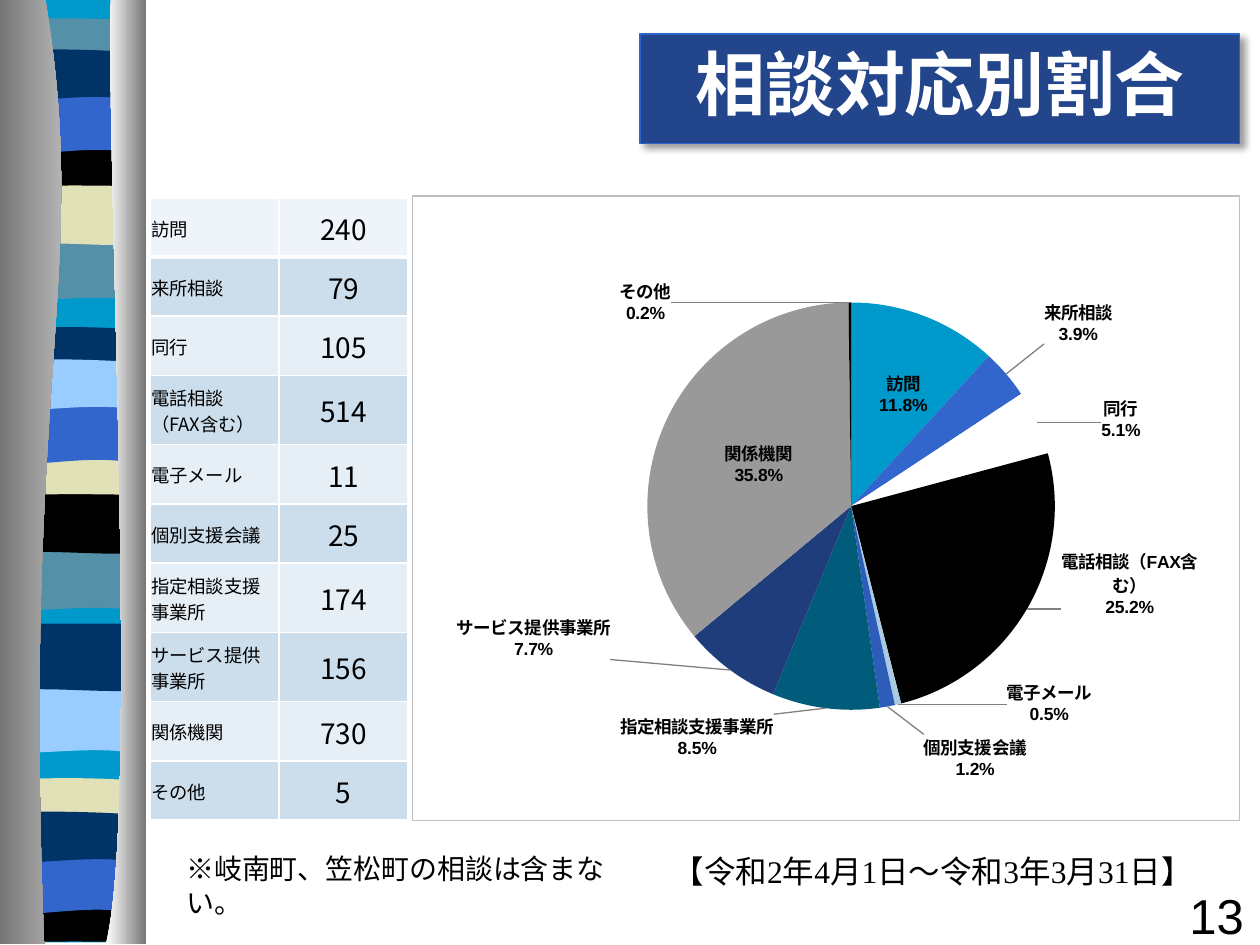
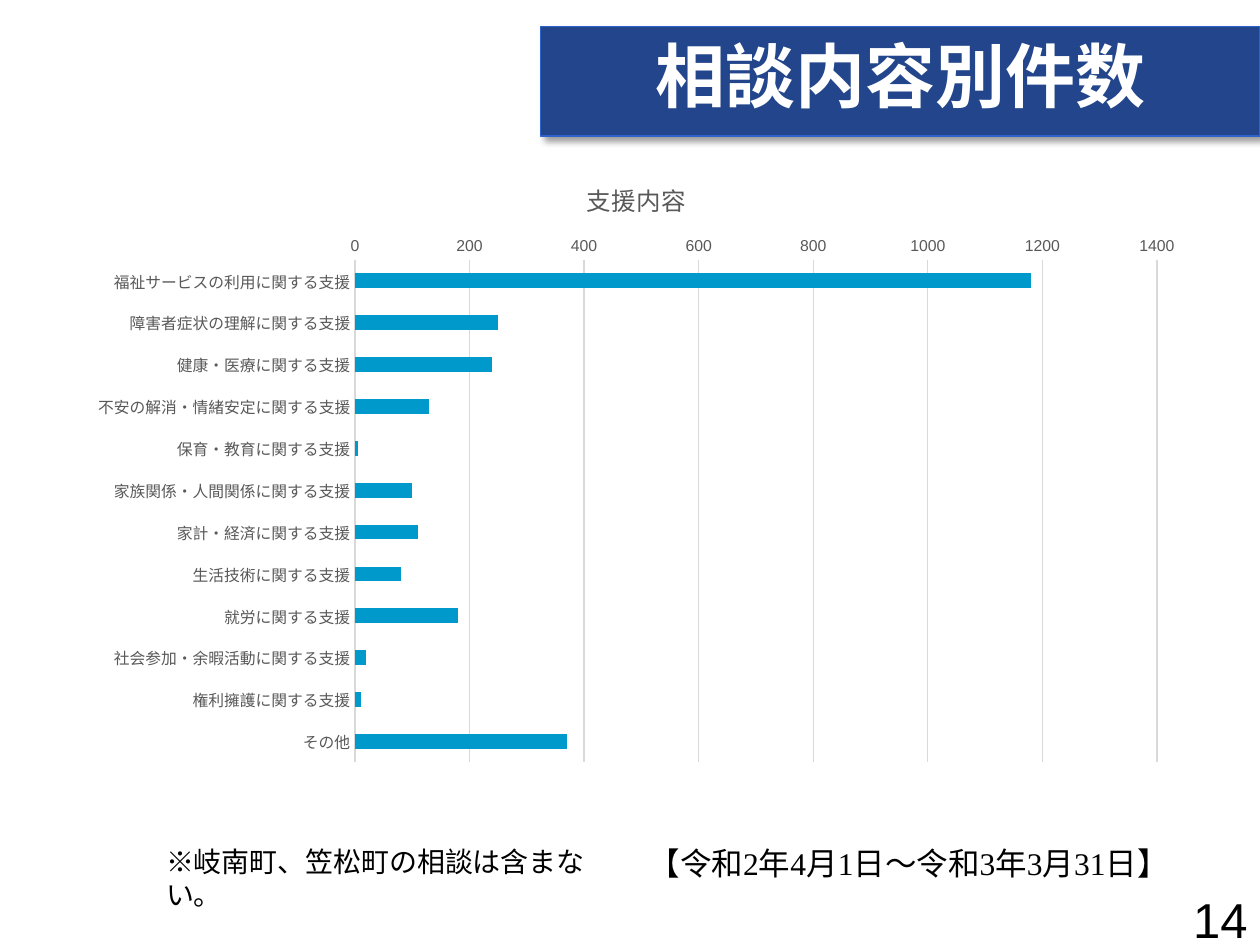
from copy import deepcopy
from itertools import accumulate
from math import cos, pi, sin

from pptx import Presentation
from pptx.chart.data import CategoryChartData
from pptx.dml.color import RGBColor
from pptx.enum.chart import XL_CHART_TYPE as ChartType, XL_LABEL_POSITION as LabelPos
from pptx.enum.chart import XL_TICK_MARK as TickMark
from pptx.enum.text import MSO_ANCHOR as Anchor, MSO_AUTO_SIZE as AutoSize, PP_ALIGN as Align
from pptx.oxml import parse_xml
from pptx.oxml.ns import nsdecls, qn
from pptx.util import Inches, Pt

BLACK = RGBColor(0, 0, 0)
WHITE = RGBColor(255, 255, 255)
TITLE_FILL = RGBColor(0x22, 0x45, 0x8B)
TITLE_LINE = RGBColor(0x2E, 0x63, 0xCB)
CYAN = RGBColor(0x00, 0x99, 0xCC)
TEAL = RGBColor(0x54, 0x90, 0xA8)
NAVY = RGBColor(0x00, 0x33, 0x66)
BLUE = RGBColor(0x33, 0x66, 0xCC)
SAND = RGBColor(0xE1, 0xE1, 0xB7)
SKY = RGBColor(0x99, 0xCC, 0xFF)
DARK_GRAY = RGBColor(0x76, 0x76, 0x76)
LIGHT_GRAY = RGBColor(0xD0, 0xD0, 0xD0)
CHART_TEXT = RGBColor(0x59, 0x59, 0x59)
GRID = RGBColor(0xD9, 0xD9, 0xD9)
FIRST_ROW = RGBColor(0xEE, 0xF4, 0xF9)
ODD_ROW = RGBColor(0xCC, 0xDE, 0xEC)
EVEN_ROW = RGBColor(0xE7, 0xEF, 0xF6)

GOTHIC, SANS, SERIF = "Noto Sans CJK JP", "Arial", "Times New Roman"
SCOPE_NOTE = "※岐南町、笠松町の相談は含まない。"
PERIOD = "【令和2年4月1日～令和3年3月31日】"

FLAT = (0, 0, 0, 0)
BASE = (FLAT, (7.48, 7.48, 7.48, 7.48))
WIDE = (FLAT, (0.55, 0.47, 0.55, 0.53))
DEEP = (FLAT, (0.53, 0.55, 0.5, 0.53))
CAP = ((0.02, 0, 0, 0.03), (0.33, 0.33, 0.33, 0.33))
DARK = (FLAT, (0.38, 0.37, 0.37, 0.38))
DIP = (FLAT, (0.47, 0.38, 0.47, 0.47))
OCEAN = ((0, 0, 0, 0.03), (0.41, 0.34, 0.41, 0.41))
STRIPES = [
    (0, BASE, CYAN),
    (1.85, WIDE, TEAL), (1.41, DEEP, SAND), (0.14, CAP, TEAL), (1.1, DARK, BLACK),
    (0.76, DIP, BLUE), (0.39, OCEAN, NAVY),
    (4.31, WIDE, TEAL), (3.86, DEEP, BLACK), (2.59, CAP, NAVY), (3.55, DARK, SAND),
    (3.22, DIP, BLUE), (2.85, OCEAN, SKY),
    (5.44, WIDE, SKY), (4.95, DEEP, NAVY), (6.17, CAP, SAND), (7.1, DARK, BLACK),
    (6.79, DIP, BLUE), (6.44, OCEAN, NAVY),
]

RESPONSES = [
    ("訪問", 240), ("来所相談", 79), ("同行", 105), ("電話相談\n（FAX含む）", 514),
    ("電子メール", 11), ("個別支援会議", 25), ("指定相談支援事業所", 174),
    ("サービス提供事業所", 156), ("関係機関", 730), ("その他", 5),
]
SHARES = [11.8, 3.9, 5.1, 25.2, 0.5, 1.2, 8.5, 7.7, 35.8, 0.2]
SLICE_COLORS = [CYAN, BLUE, WHITE, BLACK, RGBColor(0xAA, 0xCA, 0xE2),
                RGBColor(0x2D, 0x5C, 0xB9), RGBColor(0x00, 0x5C, 0x7A),
                RGBColor(0x1F, 0x3D, 0x7A), RGBColor(0x99, 0x99, 0x99), BLACK]
LABEL_CENTERS = {0: (3.9, 1.57), 1: (5.29, 1.0), 2: (5.63, 1.77), 3: (5.7, 3.08),
                 4: (5.06, 4.03), 5: (4.47, 4.46), 6: (2.26, 4.3), 7: (0.96, 3.51),
                 9: (1.85, 0.84)}

SUPPORTS = {
    "福祉サービスの利用に関する支援": 1180, "障害者症状の理解に関する支援": 250,
    "健康・医療に関する支援": 240, "不安の解消・情緒安定に関する支援": 130,
    "保育・教育に関する支援": 5, "家族関係・人間関係に関する支援": 100,
    "家計・経済に関する支援": 110, "生活技術に関する支援": 80, "就労に関する支援": 180,
    "社会参加・余暇活動に関する支援": 20, "権利擁護に関する支援": 10, "その他": 370,
}


def style_font(font, size, color, name=SANS, bold=False):
    """Set size, colour, typeface and weight of a font."""
    for key, value in {"size": Pt(size), "name": name, "bold": bold}.items():
        setattr(font, key, value)
    font.color.rgb = color


def write(frame, text, size, color, name, align=Align.LEFT, bold=False):
    """Fill a text frame with one paragraph per line of text."""
    frame.text = text
    frame.word_wrap = True
    for para in frame.paragraphs:
        para.alignment = align
        for span in para.runs:
            style_font(span.font, size, color, name, bold)
            if name == GOTHIC:
                span.font._element.find(qn("a:latin")).addnext(
                    parse_xml(f'<a:ea {nsdecls("a")} typeface="{GOTHIC}"/>'))


def add_title(page, text, box):
    """Format the title placeholder as a shadowed banner."""
    title = page.shapes.title
    for key, value in zip(("left", "top", "width", "height"), box):
        setattr(title, key, Inches(value))
    title.fill.solid()
    title.fill.fore_color.rgb = TITLE_FILL
    title.line.color.rgb = TITLE_LINE
    title.line.width = Pt(0.75)
    title.shadow.inherit = False
    title._element.spPr.find(qn("a:effectLst")).append(parse_xml(
        f'<a:outerShdw {nsdecls("a")} blurRad="{Pt(4)}" dist="{Pt(3)}" dir="2700000" '
        'algn="tl" rotWithShape="0"><a:srgbClr val="000000"><a:alpha val="38000"/>'
        '</a:srgbClr></a:outerShdw>'))
    frame = title.text_frame
    write(frame, text, 40, WHITE, GOTHIC, Align.CENTER, True)
    for key, value in {"auto_size": AutoSize.NONE, "vertical_anchor": Anchor.MIDDLE,
                       "margin_top": 0, "margin_bottom": Inches(0.1)}.items():
        setattr(frame, key, value)


def add_text(page, text, box, size, name, align=Align.LEFT):
    """Add a plain black text box and return its frame."""
    frame = page.shapes.add_textbox(*map(Inches, box)).text_frame
    write(frame, text, size, BLACK, name, align)
    return frame


def add_footer(page, left, period_left, top, number, number_box):
    """Add the period, the scope note and the page number."""
    add_text(page, PERIOD, (period_left, top, 4.61, 0.4), 18, SERIF)
    note = add_text(page, SCOPE_NOTE, (left, top, 3.94, 0.67), 16, SERIF)
    note.margin_right = Inches(0.3)
    frame = add_text(page, number, number_box, 28, SANS, Align.RIGHT)
    frame.margin_top = Inches(0.06)


def add_outline(page, points, curve_starts):
    """Draw a closed outline whose sides from the given indexes are cubic curves."""
    units = [(round(x * 1000), round(y * 1000)) for x, y in points]
    builder = page.shapes.build_freeform(*units[0], scale=Inches(1) / 1000)
    builder.add_line_segments(units[1:], close=True)
    shape = builder.convert_to_shape()
    sides = list(shape._element.iter(qn("a:lnTo")))
    for start in curve_starts:
        curve = parse_xml(f'<a:cubicBezTo {nsdecls("a")}/>')
        sides[start].addprevious(curve)
        for side in sides[start:start + 3]:
            curve.append(side[0])
            side.getparent().remove(side)
    shape.line.fill.background()
    shape.shadow.inherit = False
    return shape


def add_side_band(page, left, right, bottom):
    """Draw the wavy stripes between two shaded columns."""
    third = (right - left) / 3
    across = [left, left + third, right - third, right]
    for top, (upper, lower), color in STRIPES:
        points = list(zip(across, upper)) + list(zip(reversed(across), lower))
        stripe = add_outline(page, [(x, top + y) for x, y in points], (0, 4))
        stripe.fill.solid()
        stripe.fill.fore_color.rgb = color
    columns = [
        (0, [(0.36, 0), (0.72, 2.16), (0.17, 2.96), (0.35, bottom)], DARK_GRAY, LIGHT_GRAY),
        (1.16, [(0.88, 0), (0.84, 1.25), (1.11, 6.46), (0.84, bottom)], WHITE, DARK_GRAY),
    ]
    for side, edge, start, end in columns:
        column = add_outline(page, edge + [(side, bottom), (side, 0)], (0,))
        column.fill.gradient()
        column.fill.gradient_angle = 0
        for stop, color in zip(column.fill.gradient_stops, (start, end)):
            stop.color.rgb = color


def set_borders(cell, bottom_width):
    """Give a cell white borders."""
    props = cell._tc.get_or_add_tcPr()
    widths = {"lnL": 1, "lnR": 1, "lnT": 1, "lnB": bottom_width}
    for index, (side, width) in enumerate(widths.items()):
        props.insert(index, parse_xml(
            f'<a:{side} {nsdecls("a")} w="{Pt(width)}"><a:solidFill>'
            f'<a:srgbClr val="{WHITE}"/></a:solidFill></a:{side}>'))


def add_response_table(page, box):
    """Add the table of responses and counts."""
    table = page.shapes.add_table(len(RESPONSES), 2, *map(Inches, box)).table
    for r, (label, count) in enumerate(RESPONSES):
        table.rows[r].height = Inches(0.55 if r in (3, 6, 7) else 0.47)
        for c, (text, size, align) in enumerate(
                [(label, 10.5, Align.LEFT), (str(count), 16, Align.CENTER)]):
            cell = table.cell(r, c)
            write(cell.text_frame, text, size, BLACK, GOTHIC, align)
            margins = dict.fromkeys(("margin_left", "margin_top", "margin_right"), Inches(0.01))
            for key, value in {**margins, "margin_bottom": 0,
                               "vertical_anchor": Anchor.MIDDLE}.items():
                setattr(cell, key, value)
            cell.fill.solid()
            cell.fill.fore_color.rgb = FIRST_ROW if r == 0 else (EVEN_ROW, ODD_ROW)[r % 2]
            set_borders(cell, 3 if r == 0 else 1)


def add_chart(page, kind, categories, values, box):
    """Add a chart with one series and no legend."""
    data = CategoryChartData()
    data.categories = categories
    data.add_series("Series 1", values)
    chart = page.shapes.add_chart(kind, *map(Inches, box), data).chart
    style_font(chart.font, 10, BLACK)
    chart.has_legend = False
    return chart


def layout_xml(x, y, extra="", modes=""):
    """Return a manual chart layout element."""
    return (f'<c:layout {nsdecls("c")}><c:manualLayout>{modes}<c:x val="{x:.4f}"/>'
            f'<c:y val="{y:.4f}"/>{extra}</c:manualLayout></c:layout>')


def line_xml(color):
    """Return a thin chart outline in one colour."""
    return (f'<a:ln w="{Pt(0.75)}"><a:solidFill><a:srgbClr val="{color}"/>'
            '</a:solidFill></a:ln>')


def add_share_pie(page, box):
    """Add the framed pie chart with placed labels."""
    names = [label.replace("\n", "") for label, _ in RESPONSES]
    chart = add_chart(page, ChartType.PIE, names, SHARES, box)
    chart.has_title = False
    plot_x, plot_y, plot_w, plot_h = 0.284, 0.088, 0.493, 0.817
    area = chart._chartSpace.chart.plotArea
    for old in area.findall(qn("c:layout")):
        area.remove(old)
    area.insert(0, parse_xml(layout_xml(
        plot_x, plot_y, f'<c:w val="{plot_w}"/><c:h val="{plot_h}"/>',
        '<c:layoutTarget val="inner"/><c:xMode val="edge"/><c:yMode val="edge"/>')))
    chart._chartSpace.chart.addnext(parse_xml(
        f'<c:spPr {nsdecls("c", "a")}><a:solidFill><a:srgbClr val="{WHITE}"/></a:solidFill>'
        f'{line_xml("BFBFBF")}</c:spPr>'))
    plot = chart.plots[0]
    plot.vary_by_categories = True
    series = plot.series[0]
    for index, color in enumerate(SLICE_COLORS):
        fill = series.points[index].format.fill
        fill.solid()
        fill.fore_color.rgb = color
    labels = series.data_labels
    for key, value in {"show_percentage": True, "show_category_name": True, "show_value": False,
                       "number_format": "0.0%", "number_format_is_linked": False,
                       "position": LabelPos.CENTER}.items():
        setattr(labels, key, value)
    style_font(labels.font, 10, BLACK, bold=True)
    group = labels._element
    group.find(qn("c:showBubbleSize")).addnext(
        parse_xml(f'<c:separator {nsdecls("c")}>\n</c:separator>'))
    shared = [child for child in group if child.tag != qn("c:showLeaderLines")]
    group.find(qn("c:showLeaderLines")).addnext(parse_xml(
        f'<c:leaderLines {nsdecls("c", "a")}><c:spPr>{line_xml("808080")}</c:spPr></c:leaderLines>'))
    width, height = box[2:]
    center_x, center_y = (plot_x + plot_w / 2) * width, (plot_y + plot_h / 2) * height
    half = min(plot_w * width, plot_h * height) / 4
    ends = list(accumulate(SHARES))
    for order, (index, (x, y)) in enumerate(LABEL_CENTERS.items()):
        angle = 2 * pi * (ends[index] - SHARES[index] / 2) / ends[-1]
        label = parse_xml(f'<c:dLbl {nsdecls("c")}><c:idx val="{index}"/></c:dLbl>')
        label.append(parse_xml(layout_xml((x - center_x - half * sin(angle)) / width,
                                          (y - center_y + half * cos(angle)) / height)))
        label.extend(deepcopy(child) for child in shared)
        group.insert(order, label)


def add_support_bars(page, box):
    """Add the bar chart of support counts."""
    chart = add_chart(page, ChartType.BAR_CLUSTERED, list(SUPPORTS), list(SUPPORTS.values()), box)
    chart.has_title = True
    chart.chart_title.include_in_layout = False
    write(chart.chart_title.text_frame, "支援内容", 14, CHART_TEXT, SANS, Align.CENTER)
    plot = chart.plots[0]
    plot.gap_width = 182
    plot.vary_by_categories = False
    fill = plot.series[0].format.fill
    fill.solid()
    fill.fore_color.rgb = CYAN
    names, counts = chart.category_axis, chart.value_axis
    for axis in (names, counts):
        axis.major_tick_mark = axis.minor_tick_mark = TickMark.NONE
        style_font(axis.tick_labels.font, 9, CHART_TEXT)
    names.reverse_order = True
    counts.minimum_scale, counts.maximum_scale, counts.major_unit = 0, 1400, 200
    counts.has_major_gridlines = True
    counts.format.line.fill.background()
    for line in (names.format.line, counts.major_gridlines.format.line):
        line.color.rgb = GRID
        line.width = Pt(0.75)


def main():
    """Build both pages and save the deck."""
    deck = Presentation()
    deck.slide_width, deck.slide_height = Inches(10), Inches(7.5)
    title_only = deck.slide_layouts[5]

    page = deck.slides.add_slide(title_only)
    add_side_band(page, 0.05, 1.14, 7.49)
    add_title(page, "相談対応別割合", (5.08, 0.27, 4.76, 0.87))
    add_share_pie(page, (3.27, 1.55, 6.57, 4.97))
    add_response_table(page, (1.19, 1.57, 2.05, 4.95))
    add_footer(page, 1.38, 5.24, 6.71, "13", (7.89, 6.97, 2.08, 0.5))

    page = deck.slides.add_slide(title_only)
    add_title(page, "相談内容別件数", (4.29, 0.21, 5.71, 0.87))
    add_support_bars(page, (0.6, 1.23, 8.9, 4.92))
    add_footer(page, 1.22, 5.05, 6.65, "14", (7.92, 7, 2.08, 0.5))
    deck.save("out.pptx")


if __name__ == "__main__":
    main()
